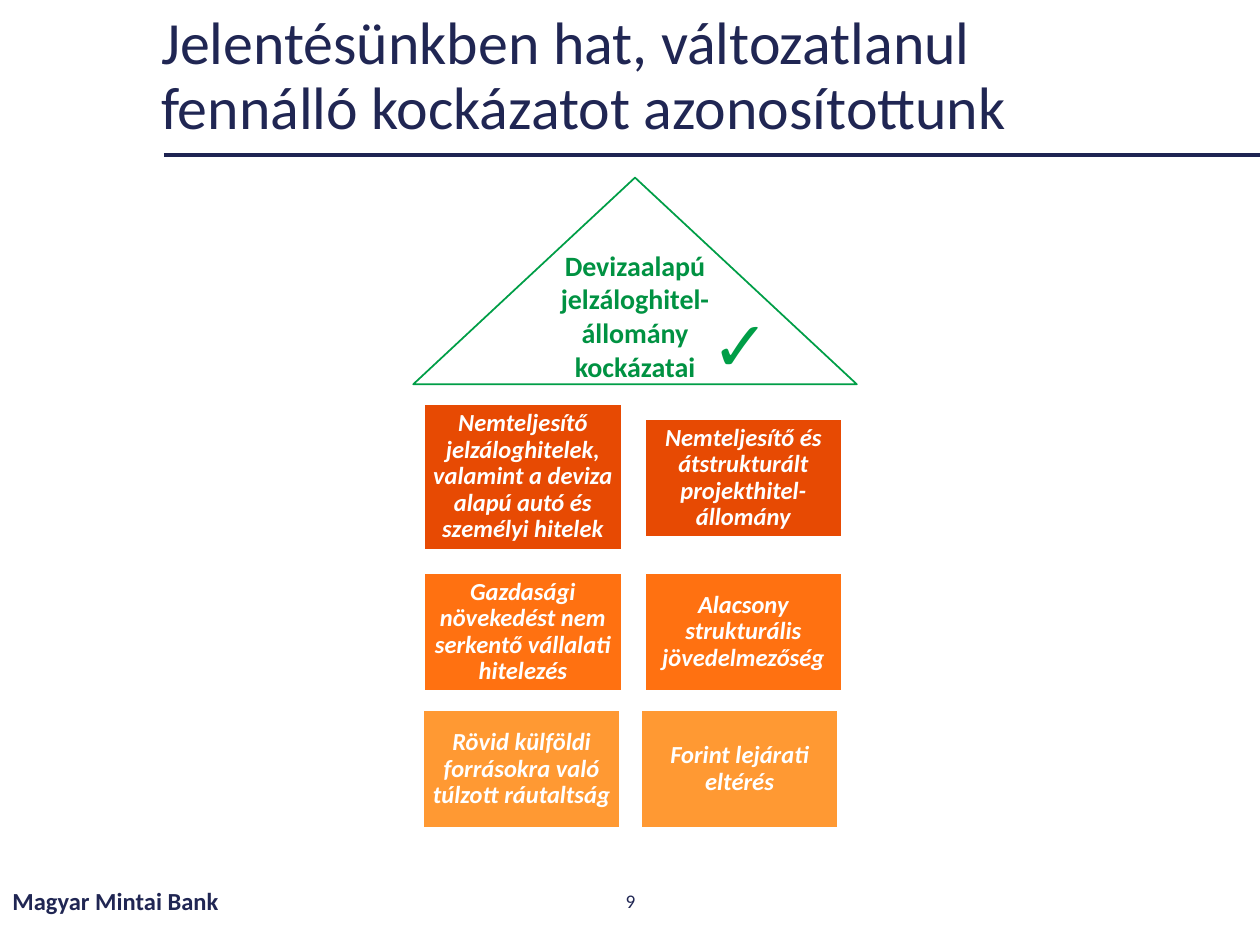
from dataclasses import dataclass

from lxml import etree
from pptx import Presentation
from pptx.dml.color import RGBColor
from pptx.enum.shapes import MSO_CONNECTOR, MSO_SHAPE
from pptx.enum.text import MSO_ANCHOR, PP_ALIGN
from pptx.oxml.ns import qn
from pptx.util import Inches, Pt

LEFT, CENTER = PP_ALIGN.LEFT, PP_ALIGN.CENTER
TOP, MIDDLE = MSO_ANCHOR.TOP, MSO_ANCHOR.MIDDLE
RECTANGLE, TRIANGLE = MSO_SHAPE.RECTANGLE, MSO_SHAPE.ISOSCELES_TRIANGLE
STRAIGHT = MSO_CONNECTOR.STRAIGHT


@dataclass(frozen=True)
class Theme:
    """Colours, fonts and type sizes of the slide."""
    navy: str = "202653"
    rule: str = "1E2452"
    white: str = "FFFFFF"
    green: str = "009E47"
    green_text: str = "009242"
    high: str = "E74A03"
    medium: str = "FF7111"
    low: str = "FF9933"
    body_font: str = "Calibri"
    symbol_font: str = "Arial"
    title_size: float = 34.2
    roof_size: float = 16
    risk_size: float = 14
    page_size: float = 11
    check_size: float = 40


THEME = Theme()

RISK_ROWS = (
    (THEME.high, (
        ((3.36, 3.2, 1.58, 1.17), "Nemteljesítő jelzáloghitelek, valamint a deviza alapú autó és személyi hitelek"),
        ((5.11, 3.32, 1.58, 0.95), "Nemteljesítő és átstrukturált projekthitel-állomány"),
    )),
    (THEME.medium, (
        ((3.36, 4.54, 1.58, 0.95), "Gazdasági növekedést nem serkentő vállalati hitelezés"),
        ((5.11, 4.54, 1.58, 0.95), "Alacsony strukturális jövedelmezőség"),
    )),
    (THEME.low, (
        ((3.35, 5.63, 1.58, 0.95), "Rövid külföldi forrásokra való túlzott ráutaltság"),
        ((5.08, 5.63, 1.58, 0.95), "Forint lejárati eltérés"),
    )),
)


def write_text(box, text, size, color, align=LEFT, anchor=MIDDLE, spacing=1.0,
               insets=(0.1, 0.05, 0.1, 0.05), wrap=True, **font_format):
    """Fill a box with one formatted paragraph."""
    frame = box.text_frame
    sides = ("margin_left", "margin_top", "margin_right", "margin_bottom")
    frame_format = dict(zip(sides, map(Inches, insets)))
    frame_format.update(word_wrap=wrap, vertical_anchor=anchor)
    for name, value in frame_format.items():
        setattr(frame, name, value)
    para = frame.paragraphs[0]
    para.alignment, para.line_spacing = align, spacing
    span = para.add_run()
    span.text = text
    span.font.color.rgb = RGBColor.from_string(color)
    for name, value in {"name": THEME.body_font, "size": Pt(size), **font_format}.items():
        setattr(span.font, name, value)


def add_label(page, place, text, size, color, **text_format):
    """Add a text box."""
    box = page.shapes.add_textbox(*map(Inches, place))
    write_text(box, text, size, color, **text_format)


def add_panel(page, kind, place, fill, line, width, text, size, color, **text_format):
    """Add a filled shape with centred bold text."""
    panel = page.shapes.add_shape(kind, *map(Inches, place))
    panel.shadow.inherit = False
    panel.fill.solid()
    panel.fill.fore_color.rgb = RGBColor.from_string(fill)
    panel.line.color.rgb = RGBColor.from_string(line)
    panel.line.width = Pt(width)
    write_text(panel, text, size, color, align=CENTER, bold=True, **text_format)


def add_rule(page, start, end, color, width):
    """Add a straight line without a shadow."""
    rule = page.shapes.add_connector(STRAIGHT, *map(Inches, start + end))
    rule.line.color.rgb = RGBColor.from_string(color)
    rule.line.width = Pt(width)
    etree.SubElement(rule._element.spPr, qn("a:effectLst"))


def main():
    """Build the slide and save it."""
    deck = Presentation()
    deck.slide_width, deck.slide_height = Inches(10), Inches(7.5)
    page = deck.slides.add_slide(deck.slide_layouts[6])

    add_rule(page, (1.3, 1.23), (10, 1.23), THEME.rule, 2.25)
    add_label(page, (1.18, 0.2, 8.19, 0.83),
              "Jelentésünkben hat, változatlanul fennálló kockázatot azonosítottunk",
              THEME.title_size, THEME.navy, spacing=0.9)
    add_label(page, (0, 6.95, 3.38, 0.4), "Magyar Mintai Bank",
              THEME.risk_size, THEME.navy, bold=True)
    add_label(page, (3.88, 6.95, 2.25, 0.4), "9", THEME.page_size, THEME.navy, align=CENTER)

    for fill, risks in RISK_ROWS:
        for place, text in risks:
            add_panel(page, RECTANGLE, place, fill, THEME.white, 2, text, THEME.risk_size,
                      THEME.white, spacing=0.9, insets=(0.06,) * 4, italic=True)

    add_panel(page, TRIANGLE, (3.28, 1.41, 3.52, 1.64), THEME.white, THEME.green, 1,
              "Devizaalapú jelzáloghitel-állomány kockázatai", THEME.roof_size,
              THEME.green_text, insets=(0.1, 0.05, 0.1, 0.32))
    add_label(page, (5.55, 2.34, 0.64, 0.77), "✓", THEME.check_size, THEME.green,
              anchor=TOP, wrap=False, name=THEME.symbol_font, bold=True)

    deck.save("out.pptx")


if __name__ == "__main__":
    main()
